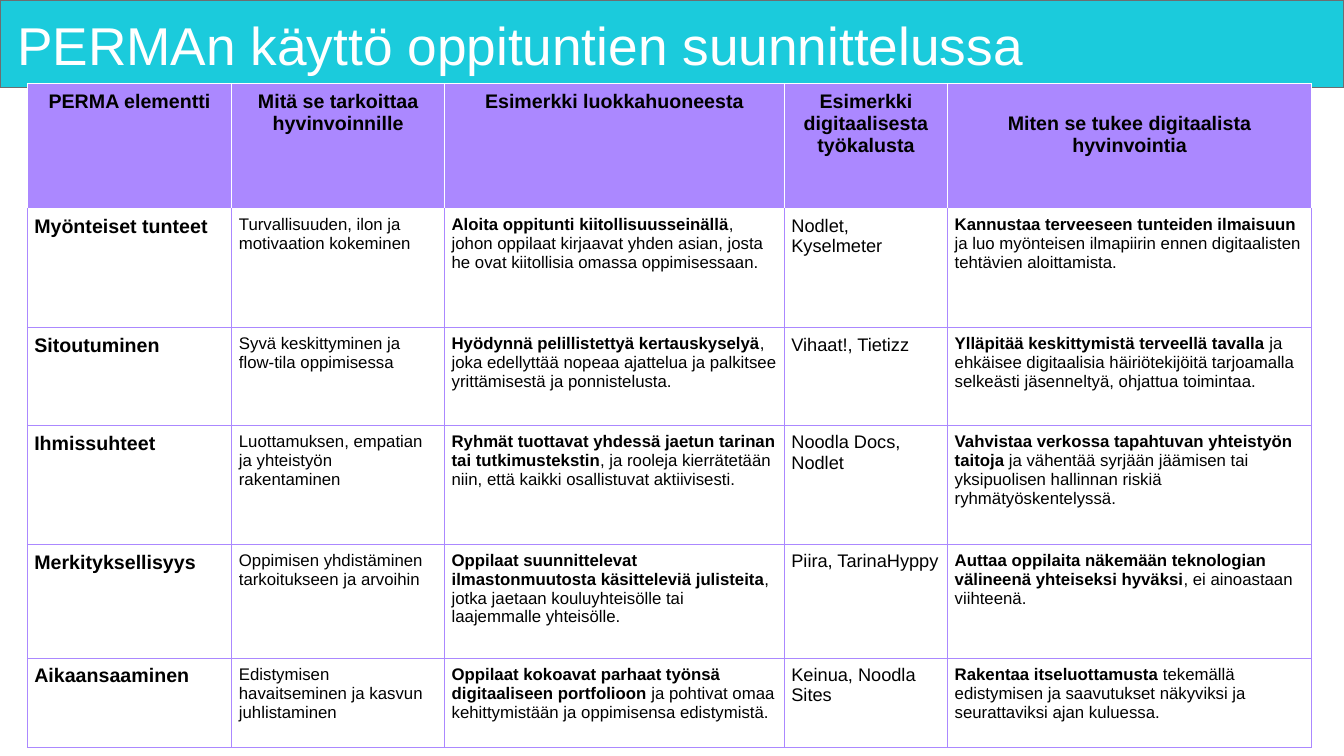
from lxml import etree
from pptx import Presentation
from pptx.dml.color import RGBColor
from pptx.enum import shapes, text
from pptx.oxml import ns
from pptx.util import Inches, Pt

FONT = "Arial"
PURPLE, TURQUOISE, GREY = "AB88FF", "1BCBDC", "6C6E70"
WHITE, BLACK = "FFFFFF", "000000"

COLUMN_WIDTHS = [2.03, 2.11, 3.37, 1.62, 3.61]
ROW_HEIGHTS = [1.24, 1.18, 0.97, 1.18, 1.13, 0.89]
BODY_SIZES = [14, 12, 12, 13, 12]

HEADERS = [
    "PERMA elementti",
    "Mitä se tarkoittaa hyvinvoinnille",
    "Esimerkki luokkahuoneesta",
    "Esimerkki digitaalisesta työkalusta",
    "Miten se tukee digitaalista hyvinvointia",
]

# Each cell holds its bold part and its regular part.
ROWS = [
    [("Myönteiset tunteet", ""),
     ("", "Turvallisuuden, ilon ja motivaation kokeminen"),
     ("Aloita oppitunti kiitollisuusseinällä",
      ", johon oppilaat kirjaavat yhden asian, josta he ovat kiitollisia "
      "omassa oppimisessaan."),
     ("", "Nodlet, Kyselmeter"),
     ("Kannustaa terveeseen tunteiden ilmaisuun",
      " ja luo myönteisen ilmapiirin ennen digitaalisten tehtävien "
      "aloittamista.")],
    [("Sitoutuminen", ""),
     ("", "Syvä keskittyminen ja flow-tila oppimisessa"),
     ("Hyödynnä pelillistettyä kertauskyselyä",
      ", joka edellyttää nopeaa ajattelua ja palkitsee yrittämisestä ja "
      "ponnistelusta."),
     ("", "Vihaat!, Tietizz"),
     ("Ylläpitää keskittymistä terveellä tavalla",
      " ja ehkäisee digitaalisia häiriötekijöitä tarjoamalla selkeästi "
      "jäsenneltyä, ohjattua toimintaa.")],
    [("Ihmissuhteet", ""),
     ("", "Luottamuksen, empatian ja yhteistyön rakentaminen"),
     ("Ryhmät tuottavat yhdessä jaetun tarinan tai tutkimustekstin",
      ", ja rooleja kierrätetään niin, että kaikki osallistuvat "
      "aktiivisesti."),
     ("", "Noodla Docs, Nodlet"),
     ("Vahvistaa verkossa tapahtuvan yhteistyön taitoja",
      " ja vähentää syrjään jäämisen tai yksipuolisen hallinnan riskiä "
      "ryhmätyöskentelyssä.")],
    [("Merkityksellisyys", ""),
     ("", "Oppimisen yhdistäminen tarkoitukseen ja arvoihin"),
     ("Oppilaat suunnittelevat ilmastonmuutosta käsitteleviä julisteita",
      ", jotka jaetaan kouluyhteisölle tai laajemmalle yhteisölle."),
     ("", "Piira, TarinaHyppy"),
     ("Auttaa oppilaita näkemään teknologian välineenä yhteiseksi hyväksi",
      ", ei ainoastaan viihteenä.")],
    [("Aikaansaaminen", ""),
     ("", "Edistymisen havaitseminen ja kasvun juhlistaminen"),
     ("Oppilaat kokoavat parhaat työnsä digitaaliseen portfolioon",
      " ja pohtivat omaa kehittymistään ja oppimisensa edistymistä."),
     ("", "Keinua, Noodla Sites"),
     ("Rakentaa itseluottamusta",
      " tekemällä edistymisen ja saavutukset näkyviksi ja seurattaviksi "
      "ajan kuluessa.")],
]


def color(hex_value):
    return RGBColor.from_string(hex_value)


def format_run(r, size, hex_value, bold=False):
    r.font.name = FONT
    r.font.size = Pt(size)
    r.font.bold = bold
    r.font.color.rgb = color(hex_value)


def set_margins(box, inches):
    box.margin_left = box.margin_right = Inches(inches)
    box.margin_top = box.margin_bottom = Inches(inches)


def add_title_bar(s):
    """Add the bar behind everything else on the slide."""
    bar = s.shapes.add_shape(shapes.MSO_SHAPE.RECTANGLE, 0, 0,
                             Inches(13.33), Inches(0.87))
    bar.shadow.inherit = False
    bar.fill.solid()
    bar.fill.fore_color.rgb = color(TURQUOISE)
    bar.line.color.rgb = color(GREY)
    bar.line.width = Pt(1)
    s.shapes._spTree.insert(2, bar._element)


def format_title(title, wording):
    title.left, title.top = Inches(0.11), Inches(0.09)
    title.width, title.height = Inches(13.06), Inches(0.78)
    tf = title.text_frame
    tf.text = wording
    tf.auto_size = text.MSO_AUTO_SIZE.NONE
    tf.vertical_anchor = text.MSO_ANCHOR.MIDDLE
    set_margins(tf, 0.06)
    p = tf.paragraphs[0]
    p.alignment = text.PP_ALIGN.LEFT
    p.line_spacing = 0.9
    format_run(p.runs[0], 38, WHITE)


def set_borders(cell, side, top):
    tc_pr = cell._tc.get_or_add_tcPr()
    for edge, hex_value in zip("LRTB", (side, side, top, side)):
        line = etree.SubElement(tc_pr, ns.qn(f"a:ln{edge}"), w=str(Pt(0.75)))
        fill = etree.SubElement(line, ns.qn("a:solidFill"))
        etree.SubElement(fill, ns.qn("a:srgbClr"), val=hex_value)


def fill_header(cell, wording):
    set_margins(cell, 0.07)
    set_borders(cell, WHITE, WHITE)
    cell.fill.solid()
    cell.fill.fore_color.rgb = color(PURPLE)
    cell.text_frame.text = wording
    p = cell.text_frame.paragraphs[0]
    p.alignment = text.PP_ALIGN.CENTER
    format_run(p.runs[0], 14, BLACK, True)


def fill_body(cell, parts, size, top):
    set_margins(cell, 0.07)
    set_borders(cell, PURPLE, top)
    cell.fill.background()
    p = cell.text_frame.paragraphs[0]
    for wording, bold in zip(parts, (True, False)):
        if wording:
            r = p.add_run()
            r.text = wording
            format_run(r, size, BLACK, bold)


def add_perma_table(s):
    frame = s.shapes.add_table(len(ROW_HEIGHTS), len(COLUMN_WIDTHS),
                               Inches(0.27), Inches(0.83),
                               Inches(sum(COLUMN_WIDTHS)),
                               Inches(sum(ROW_HEIGHTS)))
    table = frame.table
    table.horz_banding = False
    for column, width in zip(table.columns, COLUMN_WIDTHS):
        column.width = Inches(width)
    for row, height in zip(table.rows, ROW_HEIGHTS):
        row.height = Inches(height)
    for j, wording in enumerate(HEADERS):
        fill_header(table.cell(0, j), wording)
    # The last heading starts one line lower than the others.
    table.cell(0, len(HEADERS) - 1).margin_top = Inches(0.29)
    for i, row in enumerate(ROWS, 1):
        top = WHITE if i == 1 else PURPLE
        for j, (parts, size) in enumerate(zip(row, BODY_SIZES)):
            fill_body(table.cell(i, j), parts, size, top)


def main():
    prs = Presentation()
    prs.slide_width, prs.slide_height = Inches(13.33), Inches(7.5)
    s = prs.slides.add_slide(prs.slide_layouts[5])
    add_title_bar(s)
    format_title(s.shapes.title, "PERMAn käyttö oppituntien suunnittelussa")
    add_perma_table(s)
    prs.save("out.pptx")


if __name__ == "__main__":
    main()
